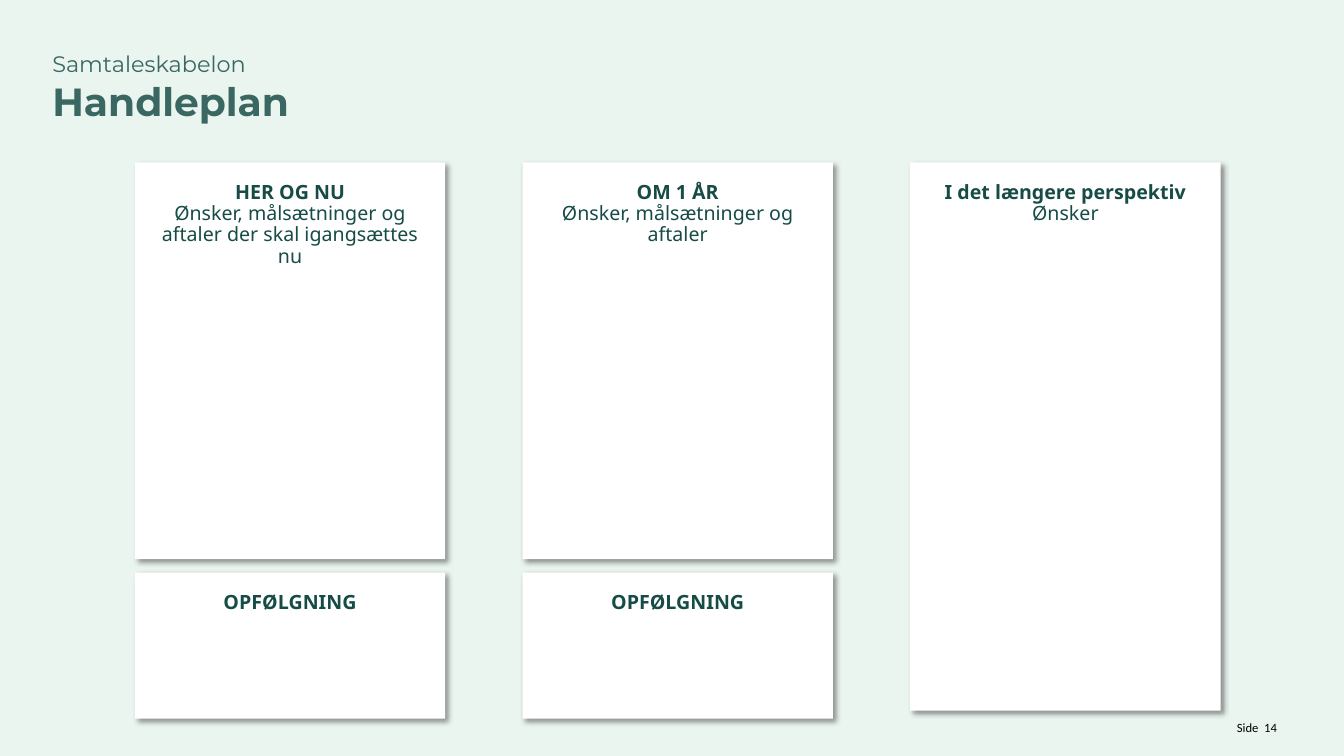
"""Build the Handleplan slide with its columns of white cards."""
from lxml.etree import SubElement as Sub
from pptx import Presentation as Deck
from pptx.dml.color import RGBColor as RGB
from pptx.enum.shapes import MSO_SHAPE as Form
from pptx.enum.text import MSO_ANCHOR as Anchor, PP_ALIGN as Align
from pptx.oxml.ns import qn
from pptx.util import Cm, Pt

MINT, WHITE, BLACK = "EBF5F0", "FFFFFF", "000000"
DARK, TEAL = "164B46", "3A6762"


def paint(fill, tone):
    fill.solid()
    fill.fore_color.rgb = RGB.from_string(tone)


def write(frame, text, size=14, font="Noto Sans", tone=DARK, bold=False,
          align=Align.CENTER, space=1.0):
    para = frame.paragraphs[0]
    if para.runs:
        para = frame.add_paragraph()
    para.alignment = align
    para.line_spacing = space
    run = para.add_run()
    run.text = text
    run.font.size = Pt(size)
    run.font.name = font
    run.font.bold = bold
    paint(run.font.fill, tone)


def shade(shape):
    shape.shadow.inherit = False
    effects = shape._element.spPr.find(qn("a:effectLst"))
    outer = Sub(effects, qn("a:outerShdw"), blurRad=str(Pt(4)),
                dist=str(Pt(3)), dir="2700000", algn="tl", rotWithShape="0")
    tone = Sub(outer, qn("a:srgbClr"), val=BLACK)
    Sub(tone, qn("a:alpha"), val="40000")


class Page:
    def __init__(self, slide):
        self.slide = slide
        self.pad = 0.51
        paint(slide.background.fill, MINT)

    def frame(self, shape, pad):
        frame = shape.text_frame
        frame.word_wrap = True
        frame.vertical_anchor = Anchor.TOP
        frame.margin_left = frame.margin_right = Cm(pad)
        frame.margin_top = frame.margin_bottom = Cm(pad)
        return frame

    def label(self, *box):
        shape = self.slide.shapes.add_textbox(*map(Cm, box))
        return self.frame(shape, 0)

    def card(self, box, head, body=""):
        shape = self.slide.shapes.add_shape(Form.RECTANGLE, *map(Cm, box))
        paint(shape.fill, WHITE)
        shape.line.fill.background()
        shade(shape)
        frame = self.frame(shape, self.pad)
        write(frame, head, bold=True, space=0.9)
        if body:
            write(frame, body, space=0.9)


def main():
    deck = Deck()
    deck.slide_width, deck.slide_height = Cm(33.87), Cm(19.05)
    page = Page(deck.slides.add_slide(deck.slide_layouts[6]))

    title = page.label(1.32, 1.27, 20.52, 2.46)
    look = dict(font="Montserrat", tone=TEAL, align=Align.LEFT)
    write(title, "Samtaleskabelon", size=16, **look)
    write(title, "Handleplan", size=28, bold=True, **look)

    left, top, wide, step = 3.4, 4.09, 7.82, 9.77
    plans = [
        ("HER OG NU",
         "Ønsker, målsætninger og aftaler der skal igangsættes nu", True),
        ("OM 1 ÅR", "Ønsker, målsætninger og aftaler", True),
        ("I det længere perspektiv", "Ønsker", False),
    ]
    for col, (head, body, follow) in enumerate(plans):
        x = left + col * step
        page.card((x, top, wide, 10 if follow else 13.82), head, body)
        if follow:
            page.card((x, 14.43, wide, 3.68), "OPFØLGNING")

    foot = page.label(27.91, 18.14, 4.27, 0.41)
    write(foot, "Side  14", size=9, font="Calibri", tone=BLACK,
          align=Align.RIGHT)
    deck.save("out.pptx")


if __name__ == "__main__":
    main()
